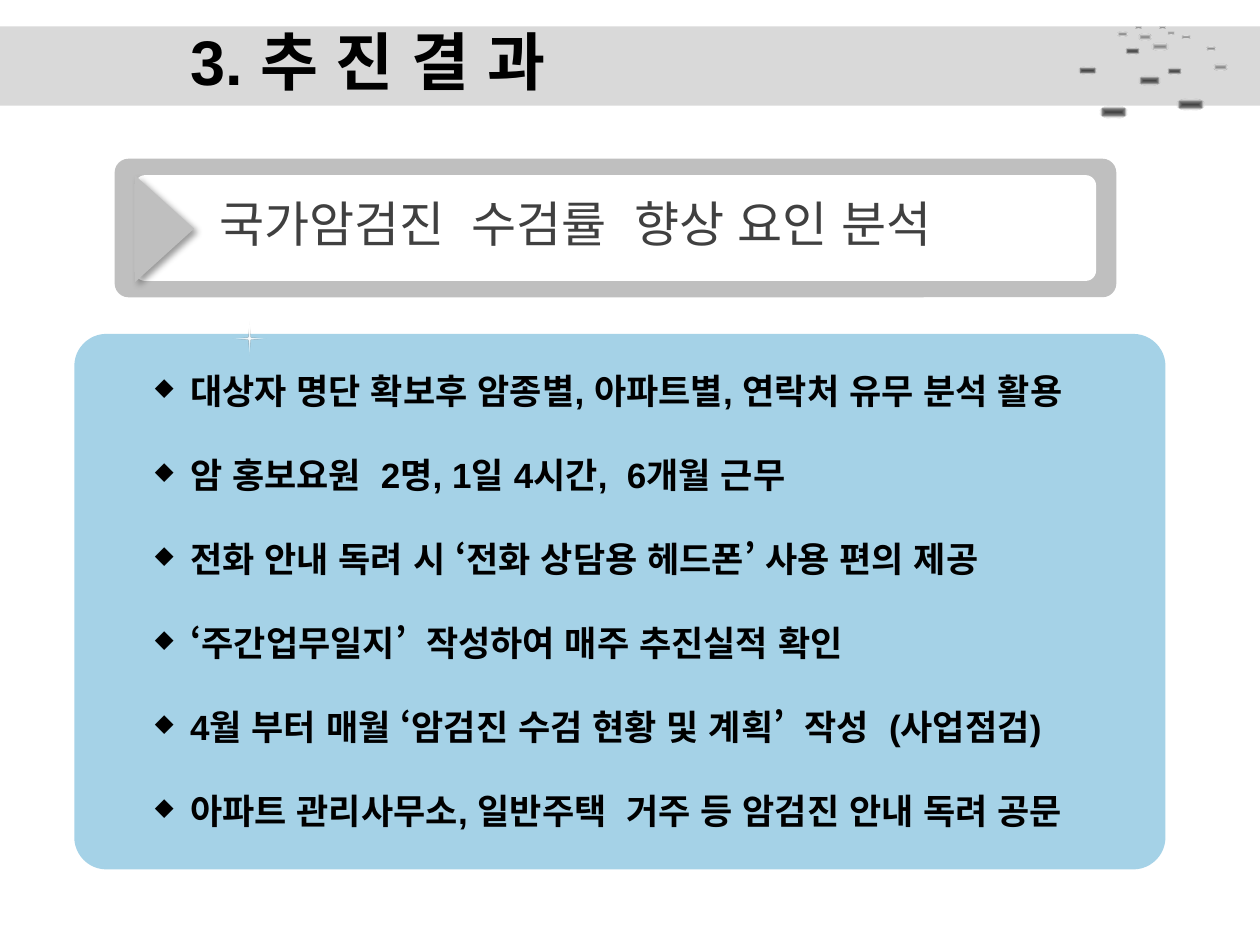
"""Build the slide on screening results and what raised the screening rate."""
from typing import NamedTuple

from lxml.etree import SubElement
from pptx import Presentation
from pptx.dml.color import RGBColor as Rgb
from pptx.enum.lang import MSO_LANGUAGE_ID as Lang
from pptx.enum.shapes import MSO_SHAPE as Kind
from pptx.enum.text import MSO_ANCHOR as Anchor, PP_ALIGN as Align
from pptx.oxml import parse_xml
from pptx.oxml.ns import nsdecls, qn
from pptx.util import Inches, Pt

BLACK = Rgb(0x00, 0x00, 0x00)
DARK = Rgb(0x40, 0x40, 0x40)
MID = Rgb(0x80, 0x80, 0x80)
GREY = Rgb(0xBF, 0xBF, 0xBF)
PALE = Rgb(0xD9, 0xD9, 0xD9)
BLUE = Rgb(0xA5, 0xD2, 0xE7)
WHITE = Rgb(0xFF, 0xFF, 0xFF)


class Box(NamedTuple):
    left: float
    top: float
    width: float
    height: float


class Stop(NamedTuple):
    pos: int
    color: Rgb
    alpha: int = 100


CLEAR = Stop(100, WHITE, 0)
DEEP = [Stop(0, DARK), Stop(50, MID), CLEAR]
LIGHT = [Stop(0, MID), Stop(50, GREY), CLEAR]
GLOW = [Stop(0, WHITE), Stop(66, WHITE, 0), CLEAR]

DEEP_DOTS = [
    Box(8.56, 0.53, 0.14, 0.06), Box(8.73, 0.84, 0.22, 0.1),
    Box(9.34, 0.78, 0.22, 0.1), Box(9.04, 0.6, 0.17, 0.08),
    Box(8.93, 0.38, 0.11, 0.05), Box(9.27, 0.54, 0.11, 0.05),
]
LIGHT_DOTS = [
    Box(9.63, 0.51, 0.11, 0.05), Box(9.58, 0.37, 0.07, 0.03),
    Box(9.38, 0.28, 0.07, 0.03), Box(9.14, 0.34, 0.13, 0.06),
    Box(9.04, 0.27, 0.1, 0.05), Box(8.87, 0.25, 0.08, 0.04),
    Box(9.01, 0.21, 0.05, 0.02), Box(9.27, 0.25, 0.05, 0.02),
    Box(9.2, 0.21, 0.05, 0.02),
]
POINTS = [
    "대상자 명단 확보후 암종별, 아파트별, 연락처 유무 분석 활용",
    "암 홍보요원  2명, 1일 4시간,  6개월 근무",
    "전화 안내 독려 시 ‘전화 상담용 헤드폰’ 사용 편의 제공",
    "‘주간업무일지’  작성하여 매주 추진실적 확인",
    "4월 부터 매월 ‘암검진 수검 현황 및 계획’  작성  (사업점검)",
    "아파트 관리사무소, 일반주택  거주 등 암검진 안내 독려 공문",
]


def add_shape(slide, kind: Kind, box: Box, color: Rgb | None = None,
              adj: float | None = None):
    """Add a borderless shape, filled when a colour is given."""
    shape = slide.shapes.add_shape(kind, *map(Inches, box))
    shape.shadow.inherit = False
    shape.line.fill.background()
    if color is not None:
        shape.fill.solid()
        shape.fill.fore_color.rgb = color
    if adj is not None:
        shape.adjustments[0] = adj
    return shape


def add_glow(shape, stops: list[Stop], form: str) -> None:
    """Fill a shape with a gradient that spreads from its centre."""
    marks = "".join(
        f'<a:gs pos="{stop.pos * 1000}"><a:srgbClr val="{stop.color}">'
        f'<a:alpha val="{stop.alpha * 1000}"/></a:srgbClr></a:gs>'
        for stop in stops)
    fill = parse_xml(
        f'<a:gradFill {nsdecls("a")}><a:gsLst>{marks}</a:gsLst>'
        f'<a:path path="{form}"><a:fillToRect l="50000" t="50000" '
        'r="50000" b="50000"/></a:path></a:gradFill>')
    shape.element.spPr.find(qn("a:prstGeom")).addnext(fill)


def add_shade(shape) -> None:
    """Give a shape a soft shadow to the lower right."""
    effects = shape.element.spPr.find(qn("a:effectLst"))
    shade = SubElement(effects, qn("a:outerShdw"), blurRad=str(Pt(4)),
                       dist=str(Pt(3)), dir="2700000", algn="tl",
                       rotWithShape="0")
    color = SubElement(shade, qn("a:srgbClr"), val=str(BLACK))
    SubElement(color, qn("a:alpha"), val="40000")


def add_text(slide, box: Box):
    """Add a wrapping text box and return its frame."""
    frame = slide.shapes.add_textbox(*map(Inches, box)).text_frame
    frame.word_wrap = True
    return frame


def set_font(para, name: str, size: float, color: Rgb, bold: bool) -> None:
    """Format every run of a paragraph as Korean text."""
    for run in para.runs:
        font = run.font
        font.name, font.size, font.bold = name, Pt(size), bold
        font.color.rgb = color
        font.language_id = Lang.KOREAN


def set_title(slide) -> None:
    """Place the title over the banner."""
    title = slide.shapes.title
    box = Box(0.75, 0.21, 8.75, 0.54)
    title.left, title.top, title.width, title.height = map(Inches, box)
    title.element.getparent().append(title.element)
    frame = title.text_frame
    frame.text = "3. 추 진 결 과"
    frame.vertical_anchor = Anchor.MIDDLE
    frame.margin_left = Inches(0.76)
    para = frame.paragraphs[0]
    para.alignment = Align.LEFT
    set_font(para, "Arial", 36, BLACK, True)


def add_points(slide) -> None:
    """List the points with diamond bullets."""
    frame = add_text(slide, Box(1.06, 2.88, 8.03, 3.8))
    frame.margin_left = Inches(0.17)
    for i, point in enumerate(POINTS):
        para = frame.add_paragraph() if i else frame.paragraphs[0]
        props = para._p.get_or_add_pPr()
        props.set("marL", str(Inches(0.28)))
        props.set("indent", str(-Inches(0.28)))
        if i:
            para.space_before = Pt(24)
        SubElement(props, qn("a:buSzPct"), val="70000")
        SubElement(props, qn("a:buChar"), char="◆")
        para.text = point
        set_font(para, "Arial", 20, BLACK, True)


def main() -> None:
    """Build and save the slide."""
    deck = Presentation()
    deck.slide_width, deck.slide_height = Inches(10), Inches(7.5)
    slide = deck.slides.add_slide(deck.slide_layouts[5])

    add_shape(slide, Kind.RECTANGLE, Box(0, 0.21, 10, 0.63), PALE)
    for dots, stops in ((DEEP_DOTS, DEEP), (LIGHT_DOTS, LIGHT)):
        for box in dots:
            add_glow(add_shape(slide, Kind.OVAL, box), stops, "shape")

    round_box = Kind.ROUNDED_RECTANGLE
    add_shape(slide, round_box, Box(0.91, 1.26, 7.95, 1.1), GREY, 0.1)
    add_shape(slide, round_box, Box(1.07, 1.39, 7.63, 0.84), WHITE, 0.1)
    set_title(slide)
    arrow = add_shape(slide, Kind.ISOSCELES_TRIANGLE,
                      Box(0.88, 1.58, 0.85, 0.47), GREY)
    arrow.rotation = 90
    add_shade(arrow)

    add_shape(slide, round_box, Box(0.59, 2.65, 8.66, 4.25), BLUE, 0.06)
    add_points(slide)
    star = add_shape(slide, Kind.STAR_4_POINT, Box(1.83, 2.54, 0.3, 0.3),
                     adj=0.04)
    add_glow(star, GLOW, "circle")

    head = add_text(slide, Box(1.54, 1.49, 7.27, 0.57))
    head.margin_left = Inches(0.2)
    head.text = "국가암검진  수검률  향상 요인 분석"
    set_font(head.paragraphs[0], "Noto Sans CJK KR", 28, DARK, False)
    deck.save("out.pptx")


if __name__ == "__main__":
    main()
